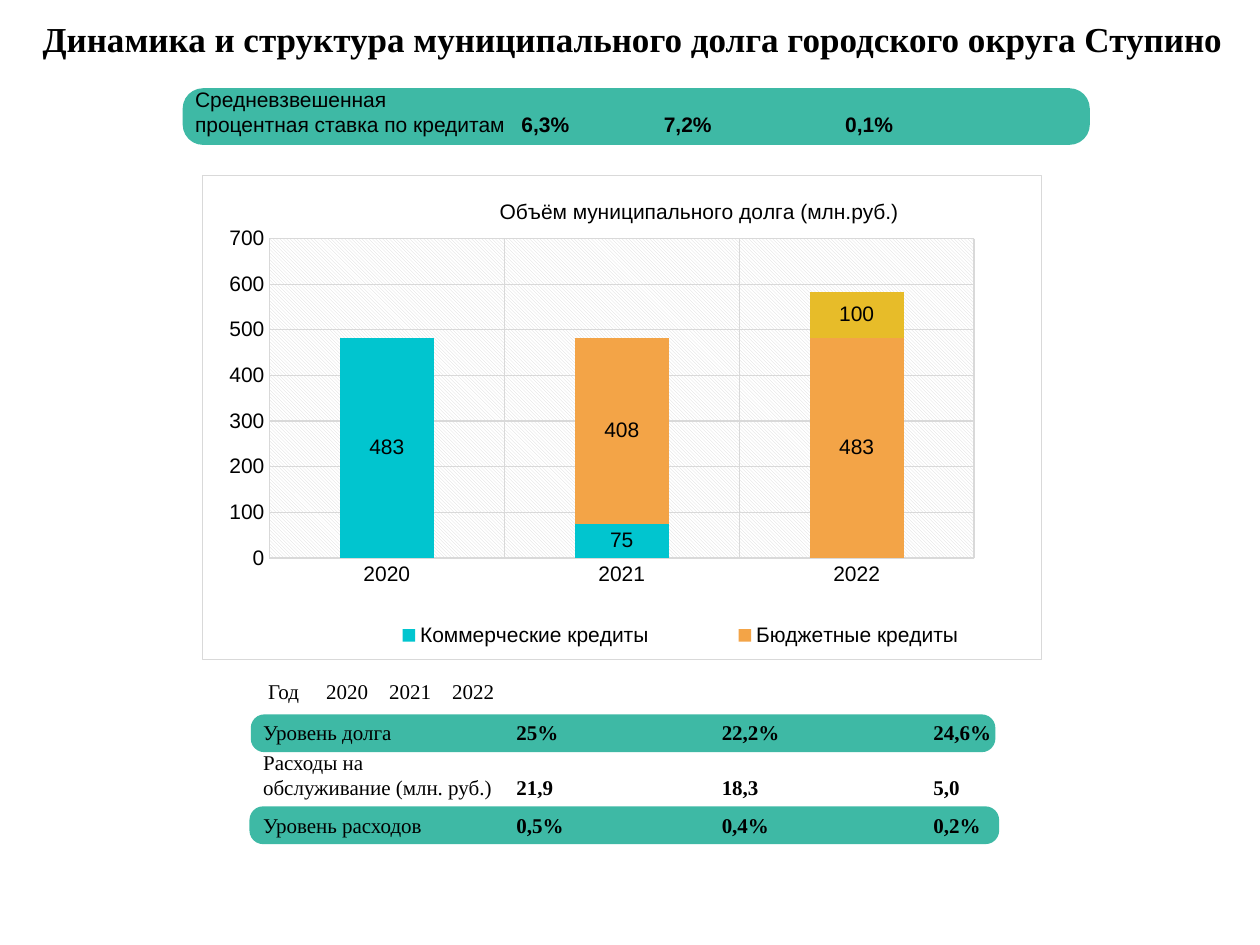
from lxml import etree
from pptx import Presentation
from pptx.chart.data import CategoryChartData
from pptx.dml.color import RGBColor
from pptx.enum import chart as ch, shapes, text
from pptx.oxml import parse_xml
from pptx.oxml.ns import qn
from pptx.util import Inches, Pt

TITLE = "Динамика и структура муниципального долга городского округа Ступино"
RATES = [
    (["Средневзвешенная"], 0),
    (["процентная ставка по кредитам", "6,3%", "7,2%", "0,1%"], 0),
]
LEVELS = [  # cells, space before in points
    (["Год", "2020", "2021", "2022"], 0),
    (["Уровень долга", "25%", "22,2%", "24,6%"], 8.5),
    (["Расходы на"], 3),
    (["обслуживание (млн. руб.)", "21,9", "18,3", "5,0"], 0),
    (["Уровень расходов", "0,5%", "0,4%", "0,2%"], 7),
]
BANDS = [(1.45, 0.7, 7.2, 0.45), (1.99, 5.67, 5.91, 0.3), (1.98, 6.4, 5.95, 0.3)]
YEARS = ["2020", "2021", "2022"]
DEBT = [  # the last series has no legend entry
    ("Коммерческие кредиты", [483, 75, None], "01C5CF"),
    ("Бюджетные кредиты", [None, 408, 483], "F3A447"),
    ("", [None, None, 100], "E7BC29"),
]
CAPTION = "Объём муниципального долга (млн.руб.)"
TEAL, BLACK, WHITE, GREY = "3EB9A5", "000000", "FFFFFF", "D9D9D9"
SERIF, SANS = "Times New Roman", "Arial"
SPACES = ('xmlns:c="http://schemas.openxmlformats.org/drawingml/2006/chart" '
          'xmlns:a="http://schemas.openxmlformats.org/drawingml/2006/main"')


def color(value):
    return RGBColor.from_string(value)


def style(font, face, size, bold=False):
    font.name, font.size, font.bold = face, Pt(size), bold
    font.color.rgb = color(BLACK)


def add_box(slide, place):
    frame = slide.shapes.add_textbox(*map(Inches, place)).text_frame
    frame.word_wrap = True
    return frame


def add_rows(slide, place, rows, stops, face, head=False):
    """Text lines with a plain label and bold values at tab stops."""
    frame = add_box(slide, place)
    for i, (cells, gap) in enumerate(rows):
        para = frame.paragraphs[0] if i == 0 else frame.add_paragraph()
        props = para._p.get_or_add_pPr()
        if head and i == 0:
            props.set("indent", str(Inches(0.04)))
        tabs = etree.SubElement(props, qn("a:tabLst"))
        for stop in stops:
            etree.SubElement(tabs, qn("a:tab"), pos=str(Inches(stop)), algn="l")
        if gap:
            para.space_before = Pt(gap)
        for j, cell in enumerate(cells):
            run = para.add_run()
            run.text = "\t" + cell if j else cell
            style(run.font, face, 12, j > 0 and not (head and i == 0))


def set_layout(node, after, x, y, w=None, h=None, inner=False):
    """Fix the place of a chart part, in fractions of the chart."""
    for old in node.findall(qn("c:layout")):
        node.remove(old)
    parts = '<c:layoutTarget val="inner"/>' if inner else ""
    parts += '<c:xMode val="edge"/><c:yMode val="edge"/>'
    for name, val in zip("xywh", (x, y, w, h)):
        if val is not None:
            parts += f'<c:{name} val="{val}"/>'
    layout = parse_xml(f"<c:layout {SPACES}><c:manualLayout>{parts}"
                       "</c:manualLayout></c:layout>")
    if after is None:
        node.insert(0, layout)
    else:
        after.addnext(layout)


def add_debt(slide):
    data = CategoryChartData()
    data.categories = YEARS
    for name, vals, _ in DEBT:
        data.add_series(name, vals)
    place = map(Inches, (1.6, 1.39, 6.67, 3.85))
    chart = slide.shapes.add_chart(
        ch.XL_CHART_TYPE.COLUMN_STACKED, *place, data).chart
    style(chart.font, SANS, 12)

    plot = chart.plots[0]
    plot.gap_width, plot.overlap, plot.vary_by_categories = 150, 100, False
    for series, (_, _, fill) in zip(plot.series, DEBT):
        series.format.fill.solid()
        series.format.fill.fore_color.rgb = color(fill)
        series.data_labels.show_value = True
        style(series.data_labels.font, SANS, 12)

    for axis in (chart.category_axis, chart.value_axis):
        axis.has_major_gridlines = True
        axis.major_tick_mark = ch.XL_TICK_MARK.NONE
        style(axis.tick_labels.font, SANS, 12)
        for line in (axis.format.line, axis.major_gridlines.format.line):
            line.color.rgb, line.width = color(GREY), Pt(0.75)
    chart.value_axis.minimum_scale = 0
    chart.value_axis.maximum_scale = 700
    chart.value_axis.major_unit = 100

    chart.has_title = True
    frame = chart.chart_title.text_frame
    frame.text = CAPTION
    style(frame.paragraphs[0].runs[0].font, SANS, 12)
    title = chart.chart_title._element
    set_layout(title, title.find(qn("c:tx")), 0.35, 0.04)

    chart.has_legend = True
    chart.legend.position = ch.XL_LEGEND_POSITION.BOTTOM
    chart.legend.include_in_layout = False
    style(chart.legend.font, SANS, 12)
    legend = chart.legend._element
    hide = parse_xml(f'<c:legendEntry {SPACES}><c:idx val="2"/>'
                     '<c:delete val="1"/></c:legendEntry>')
    legend.find(qn("c:legendPos")).addnext(hide)
    set_layout(legend, hide, 0.14, 0.91, 0.88, 0.08)

    space = chart._chartSpace
    area = space.find(qn("c:chart")).find(qn("c:plotArea"))
    set_layout(area, None, 0.08, 0.13, 0.84, 0.66, inner=True)
    area.append(parse_xml(
        f'<c:spPr {SPACES}><a:pattFill prst="ltDnDiag">'
        f'<a:fgClr><a:srgbClr val="{GREY}"/></a:fgClr>'
        f'<a:bgClr><a:srgbClr val="{WHITE}"/></a:bgClr></a:pattFill></c:spPr>'))
    space.find(qn("c:chart")).addnext(parse_xml(
        f'<c:spPr {SPACES}><a:solidFill><a:srgbClr val="{WHITE}"/></a:solidFill>'
        f'<a:ln w="{Pt(0.75)}"><a:solidFill><a:srgbClr val="{GREY}"/>'
        '</a:solidFill></a:ln></c:spPr>'))


def main():
    deck = Presentation()
    deck.slide_width, deck.slide_height = Inches(10), Inches(7.5)
    slide = deck.slides.add_slide(deck.slide_layouts[6])

    for place in BANDS:
        band = slide.shapes.add_shape(
            shapes.MSO_SHAPE.ROUNDED_RECTANGLE, *map(Inches, place))
        band.adjustments[0] = 0.36
        band.shadow.inherit = False
        band.fill.solid()
        band.fill.fore_color.rgb = color(TEAL)
        band.line.fill.background()

    add_rows(slide, (1.45, 0.64, 7.07, 0.5), RATES, (2.59, 3.72, 5.16), SANS)
    add_rows(slide, (1.99, 5.34, 6.53, 1.36), LEVELS, (2.01, 3.64, 5.32),
             SERIF, head=True)

    para = add_box(slide, (0.02, 0.09, 10, 0.44)).paragraphs[0]
    para.text = TITLE
    para.alignment = text.PP_ALIGN.CENTER
    style(para.runs[0].font, SERIF, 20, True)

    add_debt(slide)
    deck.save("out.pptx")


if __name__ == "__main__":
    main()
